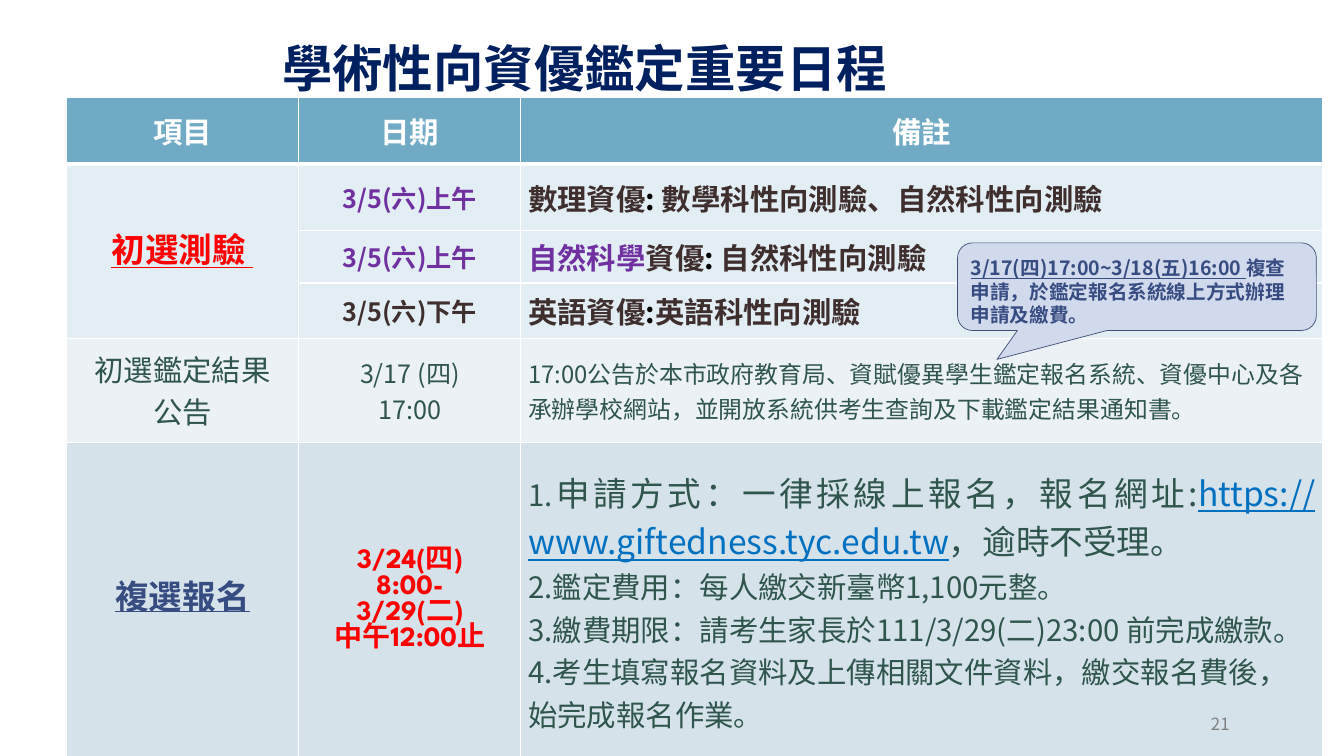
"""Build the schedule slide for the academic giftedness assessment."""
import collections

import lxml.etree
import pptx
import pptx.dml.color
import pptx.enum.shapes
import pptx.enum.text
import pptx.oxml
import pptx.oxml.ns
import pptx.util

Pt = pptx.util.Pt
ALIGN = pptx.enum.text.PP_ALIGN
ANCHOR = pptx.enum.text.MSO_ANCHOR
SANS, SPARTAN = "Noto Sans CJK SC", "League Spartan"

COLOURS = {
    "white": "FFFFFF", "header": "70AAC4", "test": "E2EEF3", "result": "EBF1F5",
    "signup": "D5E2EA", "red": "FF0000", "purple": "7030A0", "brown": "3F2E2E",
    "black": "000000", "green": "2F554C", "navy": "374C81", "link": "0070C0",
    "callout": "D1D9EC", "outline": "414E77", "grey": "808080", "title": "002060",
}

Run = collections.namedtuple("Run", "text colour size bold underline face",
                             defaults=(True, False, SANS))


def rgb(name):
    return pptx.dml.color.RGBColor.from_string(COLOURS[name])


def style(font, run):
    font.size, font.bold, font.underline = Pt(run.size), run.bold, run.underline
    font.color.rgb = rgb(run.colour)
    font.name = run.face
    latin = font._element.find(pptx.oxml.ns.qn("a:latin"))
    east_asian = lxml.etree.Element(pptx.oxml.ns.qn("a:ea"), typeface=run.face)
    latin.addnext(east_asian)


def write(frame, lines, align=ALIGN.LEFT, spacing=None):
    for index, line in enumerate(lines):
        paragraph = frame.paragraphs[0] if index == 0 else frame.add_paragraph()
        paragraph.alignment = align
        if spacing:
            paragraph.line_spacing = spacing
        for run in line:
            part = paragraph.add_run()
            part.text = run.text
            if len(line) > 1:
                style(part.font, run)
        if len(line) == 1:
            style(paragraph.font, line[0])


def add_text(slide, box, lines, align=ALIGN.LEFT, spacing=None,
             anchor=ANCHOR.TOP, insets=(7.2, 3.6)):
    frame = slide.shapes.add_textbox(*map(Pt, box)).text_frame
    frame.word_wrap = True
    frame.vertical_anchor = anchor
    frame.margin_left = frame.margin_right = Pt(insets[0])
    frame.margin_top = frame.margin_bottom = Pt(insets[1])
    write(frame, lines, align, spacing)


def add_borders(cell, bottom):
    properties = cell._tc.get_or_add_tcPr()
    for index, side in enumerate(("lnL", "lnR", "lnT", "lnB")):
        width = Pt(bottom if side == "lnB" else 1)
        properties.insert(index, pptx.oxml.parse_xml(
            f'<a:{side} {pptx.oxml.ns.nsdecls("a")} w="{width}"><a:solidFill>'
            f'<a:srgbClr val="{COLOURS["white"]}"/></a:solidFill></a:{side}>'))


def fill_cell(cell, lines, align, spacing=None):
    cell.vertical_anchor = ANCHOR.MIDDLE
    cell.margin_left = cell.margin_right = Pt(5.2)
    cell.margin_top = cell.margin_bottom = Pt(2.6)
    write(cell.text_frame, lines, align, spacing)


def schedule_rows():
    def lines(texts, *look):
        return [[Run(text, *look)] for text in texts]

    def subject(*parts):
        return [[Run(text, colour, 21) for text, colour in parts]]

    application = [
        Run("1.", "green", 21, False),
        Run("申請方式：一律採線上報名，報名網址:", "green", 24, False),
        Run("https://www.giftedness.tyc.edu.tw", "link", 24, False, True),
        Run("，逾時不受理。", "green", 24, False),
    ]
    return [
        [lines([text], "white", 21) for text in ("項目", "日期", "備註")],
        [lines(["初選測驗 "], "red", 24, True, True),
         lines(["3/5(六)上午"], "purple", 18),
         subject(("數理資優", "brown"), (":", "black"),
                 (" 數學科性向測驗、自然科性向測驗", "brown"))],
        [None, lines(["3/5(六)上午"], "purple", 18),
         subject(("自然科學", "purple"), ("資優", "brown"), (": ", "black"),
                 ("自然科性向測驗", "brown"))],
        [None, lines(["3/5(六)下午"], "brown", 18),
         subject(("英語資優", "brown"), (":", "black"), ("英語科性向測驗", "brown"))],
        [lines(["初選鑑定結果", "公告"], "green", 21, False),
         lines(["3/17 (四)", "17:00"], "green", 18, False),
         lines(["17:00公告於本市政府教育局、資賦優異學生鑑定報名系統、資優中心及各承辦學校網站，"
                "並開放系統供考生查詢及下載鑑定結果通知書。"], "green", 17, False)],
        [lines(["複選報名"], "navy", 24, True, True, SPARTAN),
         lines(["3/24(四)", "8:00-", "3/29(二)", "中午12:00止"],
               "red", 20, True, False, SPARTAN),
         [application] + lines([
             "2.鑑定費用：每人繳交新臺幣1,100元整。",
             "3.繳費期限：請考生家長於111/3/29(二)23:00 前完成繳款。",
             "4.考生填寫報名資料及上傳相關文件資料，繳交報名費後，始完成報名作業。",
         ], "green", 21, False)],
    ]


def add_schedule(slide):
    widths = (166.3, 158.6, 572.6)
    heights = (47.5, 47.5, 37.4, 39.6, 74.2, 190.8)
    fills = ("header", "test", "test", "test", "result", "signup")
    table = slide.shapes.add_table(len(heights), len(widths), Pt(47.2), Pt(69.8),
                                   Pt(sum(widths)), Pt(sum(heights))).table
    for column, width in zip(table.columns, widths):
        column.width = Pt(width)
    for row, height in zip(table.rows, heights):
        row.height = Pt(height)
    table.cell(1, 0).merge(table.cell(3, 0))
    for r, contents in enumerate(schedule_rows()):
        for c, lines in enumerate(contents):
            cell = table.cell(r, c)
            cell.fill.solid()
            cell.fill.fore_color.rgb = rgb(fills[r])
            add_borders(cell, 3 if r == 0 else 1)
            if lines:
                align = ALIGN.LEFT if c == 2 and r else ALIGN.CENTER
                fill_cell(cell, lines, align, Pt(30) if c == 0 and r in (1, 4) else None)
    table.cell(5, 2).text_frame.paragraphs[0].alignment = ALIGN.JUSTIFY


def add_review_callout(slide):
    bubble = slide.shapes.add_shape(
        pptx.enum.shapes.MSO_SHAPE.ROUNDED_RECTANGULAR_CALLOUT,
        Pt(684), Pt(173.5), Pt(256.3), Pt(62.6))
    for index, value in enumerate((-0.39, 0.83, 0.17)):
        bubble.adjustments[index] = value
    bubble.shadow.inherit = False
    bubble.fill.solid()
    bubble.fill.fore_color.rgb = rgb("callout")
    bubble.line.color.rgb = rgb("outline")
    bubble.line.width = Pt(0.5)
    add_text(slide, (686.2, 179.3, 252.7, 58.3), [[
        Run("3/17(四)17:00~3/18(五)16:00 ", "navy", 14, True, True),
        Run("複查申請，於鑑定報名系統線上方式辦理申請及繳費。", "navy", 14),
    ]])


def main():
    deck = pptx.Presentation()
    deck.slide_width, deck.slide_height = Pt(960), Pt(540)
    slide = deck.slides.add_slide(deck.slide_layouts[6])
    add_schedule(slide)
    add_review_callout(slide)
    add_text(slide, (800.6, 504, 87.1, 25.2),
             [[Run("21", "grey", 12, False, False, "Noto Sans CJK TC")]],
             ALIGN.RIGHT, anchor=ANCHOR.BOTTOM, insets=(9.4, 5))
    add_text(slide, (192.2, 25.9, 559.4, 49),
             [[Run("學術性向資優鑑定重要日程", "title", 36, True, False, "Arial")]],
             ALIGN.JUSTIFY, 0.85, ANCHOR.BOTTOM, (9.4, 5))
    deck.save("out.pptx")


if __name__ == "__main__":
    main()
